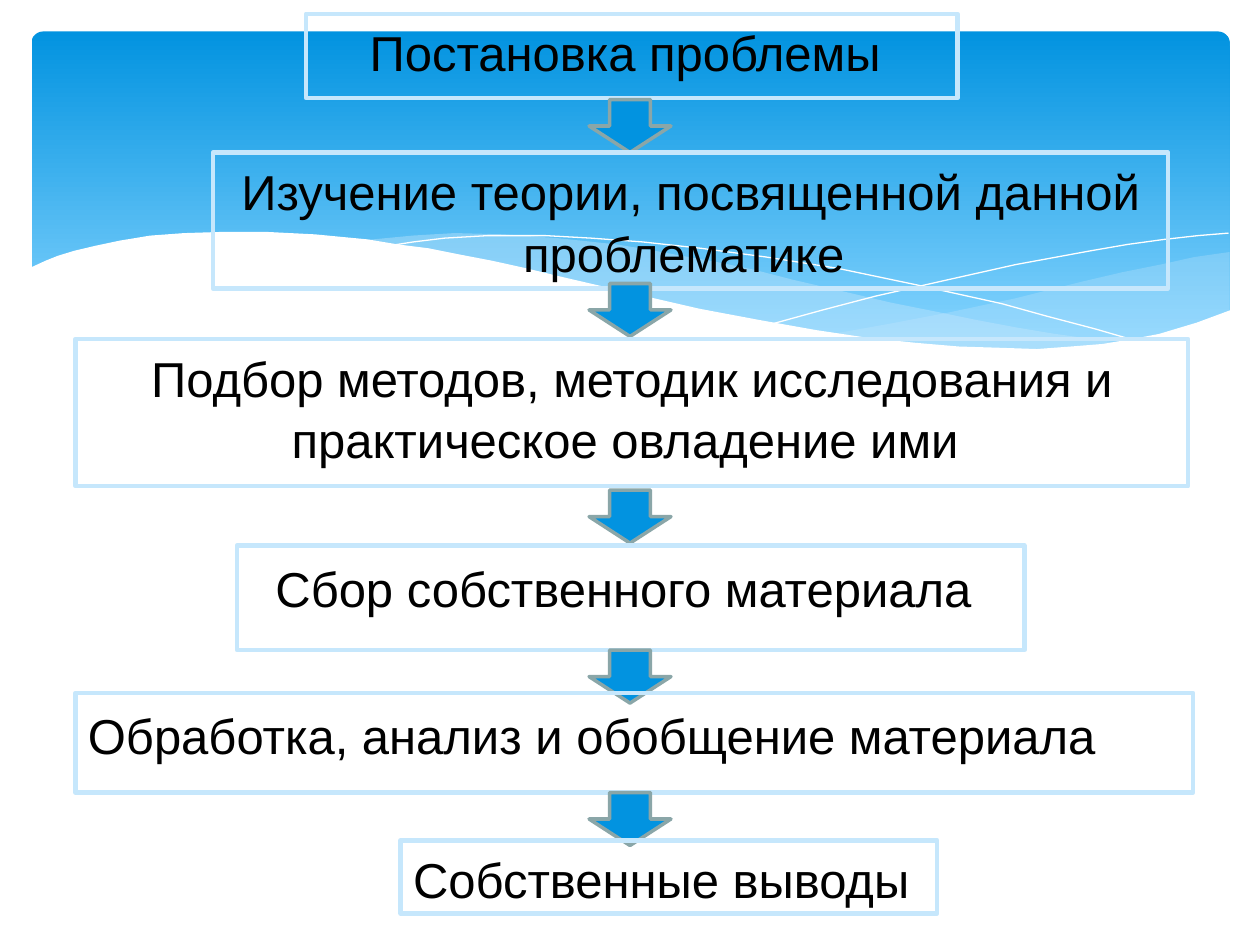
"""Builds a slide with the stages of a research project as a vertical flow."""
from lxml import etree
from pptx import Presentation
from pptx.dml.color import RGBColor
from pptx.enum.shapes import MSO_SHAPE
from pptx.enum.text import MSO_ANCHOR, PP_ALIGN
from pptx.oxml.ns import qn
from pptx.util import Cm, Pt

RECTANGLE = MSO_SHAPE.RECTANGLE
ROUNDED = MSO_SHAPE.ROUNDED_RECTANGLE
DOWN_ARROW = MSO_SHAPE.DOWN_ARROW
TOP = MSO_ANCHOR.TOP
LEFT, CENTER = PP_ALIGN.LEFT, PP_ALIGN.CENTER

COLORS = {
    "blue": "0293E0", "sky": "83D3FE", "pale": "C6E7FC",
    "gray": "8AA6A8", "white": "FFFFFF", "black": "000000",
}
CM_PER_INCH = 2.54
SLIDE_WIDTH, SLIDE_HEIGHT = 10, 7.5
ARROW_WIDTH, ARROW_HEIGHT = 0.65, 0.42

STAGES = [
    ("Постановка проблемы ", (2.43, 0.11, 5.17, 0.67), CENTER, ""),
    ("Изучение теории, посвященной данной проблематике ",
     (1.69, 1.21, 7.58, 1.08), CENTER, ""),
    ("Подбор методов, методик исследования и практическое овладение ими ",
     (0.6, 2.69, 8.83, 1.17), CENTER, ""),
    ("Сбор собственного материала", (1.88, 4.33, 6.25, 0.83), CENTER, " "),
    ("Обработка, анализ и обобщение материала",
     (0.6, 5.5, 8.87, 0.79), LEFT, " "),
    ("Собственные выводы", (3.18, 6.67, 4.26, 0.58), LEFT, ""),
]
ARROW_TOPS = [0.79, 2.25, 3.89, 5.16, 6.29]

RIGHT_WAVE = [
    (9.76, 2), (9.48, 2.04), (9.21, 2.1), (8.91, 2.16), (8.61, 2.23), (8.05, 2.37),
    (7.53, 2.48), (7.06, 2.57), (6.61, 2.65), (6.91, 2.69), (7.19, 2.72), (7.45, 2.75),
    (7.69, 2.77), (8.03, 2.78), (8.35, 2.77), (8.63, 2.75), (8.89, 2.72), (9.13, 2.67),
    (9.35, 2.62), (9.49, 2.57), (9.76, 2.47),
]
MIDDLE_WAVE = [
    (8.93, 2.73), (8.66, 2.69), (8.37, 2.65), (8.07, 2.6), (7.75, 2.54), (7.41, 2.47),
    (7.06, 2.4), (6.68, 2.31), (6.29, 2.22), (5.98, 2.14), (5.69, 2.08), (5.41, 2.03),
    (5.14, 1.98), (4.89, 1.94), (4.42, 1.89), (3.99, 1.86), (3.61, 1.85), (3.28, 1.87),
    (2.86, 1.91), (3.23, 1.96), (3.62, 2.03), (4.04, 2.11), (4.49, 2.22), (4.91, 2.32),
    (5.3, 2.4), (5.66, 2.48), (6.01, 2.55), (6.34, 2.61), (6.65, 2.66), (6.95, 2.7),
    (7.22, 2.74), (7.48, 2.76), (7.85, 2.78), (8.28, 2.78), (8.57, 2.77),
]
FALLING_LINE = [
    (3.09, 1.95), (3.28, 1.92), (3.53, 1.89), (3.87, 1.87), (4.33, 1.87), (4.69, 1.89),
    (5.1, 1.92), (5.56, 1.97), (6.08, 2.04), (6.65, 2.13), (7.27, 2.26), (7.95, 2.41),
    (8.31, 2.51), (8.69, 2.61), (9.07, 2.72),
]
RISING_LINE = [
    (6.13, 2.57), (6.53, 2.46), (6.95, 2.35), (7.48, 2.23), (8.06, 2.1), (8.66, 1.99),
    (8.95, 1.94), (9.24, 1.9), (9.51, 1.87), (9.75, 1.85),
]
FRONT_WAVE = [
    (9.77, 2.46), (9.5, 2.56), (9.2, 2.65), (8.99, 2.69), (8.75, 2.73), (8.5, 2.75),
    (8.23, 2.77), (7.93, 2.76), (7.61, 2.75), (7.26, 2.72), (6.88, 2.68), (6.48, 2.62),
    (6.03, 2.54), (5.55, 2.45), (5.03, 2.33), (4.47, 2.2), (4.18, 2.13), (3.91, 2.07),
    (3.65, 2.02), (3.4, 1.97), (3.16, 1.94), (2.92, 1.9), (2.5, 1.86), (2.11, 1.84),
    (1.77, 1.84), (1.46, 1.85), (1.19, 1.87), (0.95, 1.91), (0.76, 1.95), (0.59, 1.99),
    (0.46, 2.03), (0.36, 2.07), (0.23, 2.13), (0.23, 3.29), (9.77, 3.29),
]
CURVES = [
    (RIGHT_WAVE, {"fill": "pale", "opacity": 29}),
    (MIDDLE_WAVE, {"fill": "pale", "opacity": 40}),
    (FALLING_LINE, {"line": "white"}),
    (RISING_LINE, {"line": "white"}),
    (FRONT_WAVE, {"fill": "white"}),
]


def length(inches):
    return Cm(inches * CM_PER_INCH)


def color(name):
    return RGBColor.from_string(COLORS[name])


def format_shape(shape, fill=None, line=None, width=0, opacity=100):
    shape.shadow.inherit = False
    if fill:
        shape.fill.solid()
        shape.fill.fore_color.rgb = color(fill)
        if opacity < 100:
            value = next(shape.fill._xPr.iter(qn("a:srgbClr")))
            etree.SubElement(value, qn("a:alpha"), val=str(opacity * 1000))
    else:
        shape.fill.background()
    if line:
        shape.line.color.rgb = color(line)
        shape.line.width = Pt(width)
    else:
        shape.line.fill.background()


def add_preset(slide, kind, box, **look):
    shape = slide.shapes.add_shape(kind, *map(length, box))
    format_shape(shape, **look)
    return shape


def add_curve(slide, points, **look):
    corners = [(length(x), length(y)) for x, y in points]
    builder = slide.shapes.build_freeform(*corners[0])
    builder.add_line_segments(corners[1:], close="fill" in look)
    format_shape(builder.convert_to_shape(), **look)


def add_text(shape, text, alignment=CENTER, ending="", size=28):
    frame = shape.text_frame
    frame.word_wrap = True
    frame.vertical_anchor = TOP
    paragraph = frame.paragraphs[0]
    paragraph.alignment = alignment
    paragraph.line_spacing = 1.05
    paragraph.space_before = Pt(1)
    for part, points in ((text, size), (ending, size + 2)):
        if part:
            run = paragraph.add_run()
            run.text = part
            run.font.name = "Arial"
            run.font.size = Pt(points)
            run.font.color.rgb = color("black")


def add_backdrop(slide):
    banner = add_preset(slide, ROUNDED, (0.25, 0.25, 9.51, 2.7))
    banner.adjustments[0] = 0.034
    banner.fill.gradient()
    banner.fill.gradient_angle = 270
    stops = zip(banner.fill.gradient_stops, (("blue", 0), ("sky", 0.9)))
    for stop, (name, position) in stops:
        stop.color.rgb = color(name)
        stop.position = position
    for points, look in CURVES:
        add_curve(slide, points, **look)


def main():
    presentation = Presentation()
    presentation.slide_width = length(SLIDE_WIDTH)
    presentation.slide_height = length(SLIDE_HEIGHT)
    slide = presentation.slides.add_slide(presentation.slide_layouts[6])
    add_backdrop(slide)
    arrow_left = (SLIDE_WIDTH - ARROW_WIDTH) / 2
    for index, (text, box, alignment, ending) in enumerate(STAGES):
        if index:
            arrow_box = (arrow_left, ARROW_TOPS[index - 1], ARROW_WIDTH, ARROW_HEIGHT)
            add_preset(slide, DOWN_ARROW, arrow_box, fill="blue", line="gray", width=2)
        stage = add_preset(slide, RECTANGLE, box, line="pale", width=2.5)
        add_text(stage, text, alignment=alignment, ending=ending)
    presentation.save("out.pptx")


if __name__ == "__main__":
    main()
